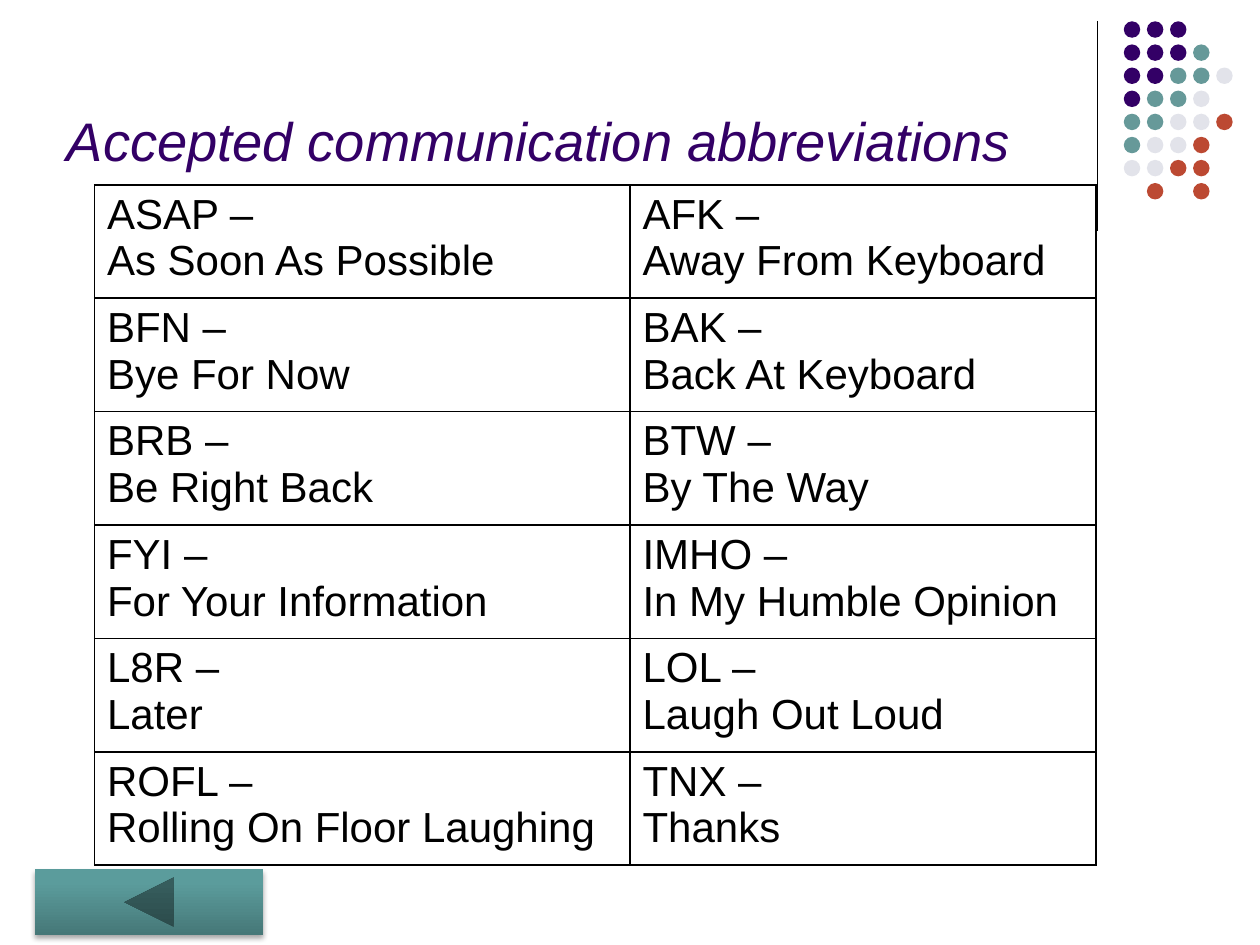
from copy import deepcopy

from lxml.etree import SubElement
from pptx import Presentation
from pptx.dml.color import RGBColor
from pptx.enum.shapes import MSO_CONNECTOR as Connector, MSO_SHAPE as Shape
from pptx.enum.text import MSO_ANCHOR as Anchor, PP_ALIGN as Align
from pptx.oxml import parse_xml
from pptx.oxml.ns import nsdecls, qn
from pptx.util import Pt

COLORS = {
    "purple": "330066", "teal": "669999", "pale": "E2E3EA", "rust": "BC4932",
    "black": "000000", "button_dark": "467878", "button_mid": "5B9C9C",
    "button_light": "5B9E9E",
}
DOT_COLORS = {"P": "purple", "T": "teal", "L": "pale", "R": "rust"}
DOT_ROWS = ["PPP", "PPPT", "PPTTL", "PTTL", "TTLLR", "TLLR", "LLRR", " R R"]
TITLE_FORMAT = {"name": "Arial", "size": Pt(31), "italic": True, "bold": False}
CELL_FORMAT = {"name": "Arial", "size": Pt(24), "bold": False}
ABBREVIATIONS = [
    [("ASAP", "As Soon As Possible"), ("AFK", "Away From Keyboard")],
    [("BFN", "Bye For Now"), ("BAK", "Back At Keyboard")],
    [("BRB", "Be Right Back"), ("BTW", "By The Way")],
    [("FYI", "For Your Information"), ("IMHO", "In My Humble Opinion")],
    [("L8R", "Later"), ("LOL", "Laugh Out Loud")],
    [("ROFL", "Rolling On Floor Laughing"), ("TNX", "Thanks")],
]


def rgb(name):
    """Return the named colour."""
    return RGBColor.from_string(COLORS[name])


def format_font(font, formats, color):
    """Apply format values and a colour to a font."""
    for key, value in formats.items():
        setattr(font, key, value)
    font.color.rgb = rgb(color)


def add_title(page, left, top, width, height):
    """Fill and place the title placeholder."""
    title = page.shapes.title
    title.left, title.top, title.width, title.height = map(Pt, (left, top, width, height))
    frame = title.text_frame
    frame.vertical_anchor, frame.word_wrap = Anchor.BOTTOM, True
    para = frame.paragraphs[0]
    para.alignment = Align.LEFT
    span = para.add_run()
    span.text = "Accepted communication abbreviations"
    format_font(span.font, TITLE_FORMAT, "purple")


def add_rule(page, left, top, height):
    """Draw the thin vertical rule beside the title."""
    rule = page.shapes.add_connector(
        Connector.STRAIGHT, Pt(left), Pt(top), Pt(left), Pt(top + height))
    rule.line.color.rgb, rule.line.width = rgb("black"), Pt(0.75)
    SubElement(rule._element.spPr, qn("a:effectLst"))


def add_dots(page, left, top, pitch, size):
    """Draw the grouped grid of coloured dots."""
    group = page.shapes.add_group_shape()
    for row, codes in enumerate(DOT_ROWS):
        for column, code in enumerate(codes):
            if code == " ":
                continue
            dot = group.shapes.add_shape(
                Shape.OVAL, Pt(left + column * pitch), Pt(top + row * pitch),
                Pt(size), Pt(size))
            dot.fill.solid()
            dot.fill.fore_color.rgb = rgb(DOT_COLORS[code])
            dot.line.fill.background()
            dot.shadow.inherit = False


def add_borders(cell):
    """Give a table cell a one-point border on every side."""
    properties = cell._tc.get_or_add_tcPr()
    for index, side in enumerate("LRTB"):
        properties.insert(index, parse_xml(
            f'<a:ln{side} {nsdecls("a")} w="{Pt(1)}"><a:solidFill>'
            f'<a:srgbClr val="{COLORS["black"]}"/></a:solidFill></a:ln{side}>'))


def add_abbreviations(page, left, top, widths, row_height):
    """Build the table of abbreviations and their meanings."""
    rows = len(ABBREVIATIONS)
    table = page.shapes.add_table(
        rows, len(widths), Pt(left), Pt(top), Pt(sum(widths)), Pt(rows * row_height)).table
    table.first_row = table.horz_banding = False
    for column, width in zip(table.columns, widths):
        column.width = Pt(width)
    for row, entries in zip(table.rows, ABBREVIATIONS):
        row.height = Pt(row_height)
        for cell, (short, meaning) in zip(row.cells, entries):
            cell.fill.background()
            add_borders(cell)
            cell.text = f"{short} –\n{meaning}"
            for para in cell.text_frame.paragraphs:
                indent = para._p.get_or_add_pPr()
                indent.set("marL", str(Pt(27)))
                indent.set("indent", str(Pt(-27)))
                format_font(para.runs[0].font, CELL_FORMAT, "black")


def add_back_button(page, left, top, width, height):
    """Draw the back button with its gradient and soft shadow."""
    button = page.shapes.add_shape(
        Shape.ACTION_BUTTON_BACK_OR_PREVIOUS, Pt(left), Pt(top), Pt(width), Pt(height))
    button.line.fill.background()
    button.fill.gradient()
    button.fill.gradient_angle = 90
    properties = button._element.spPr
    stop_list = properties.find(".//" + qn("a:gsLst"))
    stop_list.append(deepcopy(stop_list[-1]))
    stops = [(0, "button_dark"), (0.8, "button_mid"), (1, "button_light")]
    for stop, (position, color) in zip(button.fill.gradient_stops, stops):
        stop.position, stop.color.rgb = position, rgb(color)
    button.shadow.inherit = False
    properties.find(qn("a:effectLst")).append(parse_xml(
        f'<a:outerShdw {nsdecls("a")} blurRad="{Pt(3.1)}" dist="{Pt(1.8)}" '
        f'dir="5400000" rotWithShape="0"><a:srgbClr val="{COLORS["black"]}">'
        '<a:alpha val="35000"/></a:srgbClr></a:outerShdw>'))


def main():
    """Build and save the slide."""
    deck = Presentation()
    deck.slide_width, deck.slide_height = Pt(720), Pt(540)
    page = deck.slides.add_slide(deck.slide_layouts[5])
    add_rule(page, 627, 12, 120)
    add_dots(page, 642.2, 12.2, 13.2, 9.4)
    add_title(page, 31, 0, 594, 102)
    add_abbreviations(page, 54, 105.6, (306, 266.4), 64.8)
    add_back_button(page, 20, 496.8, 130.3, 37.5)
    deck.save("out.pptx")


if __name__ == "__main__":
    main()
